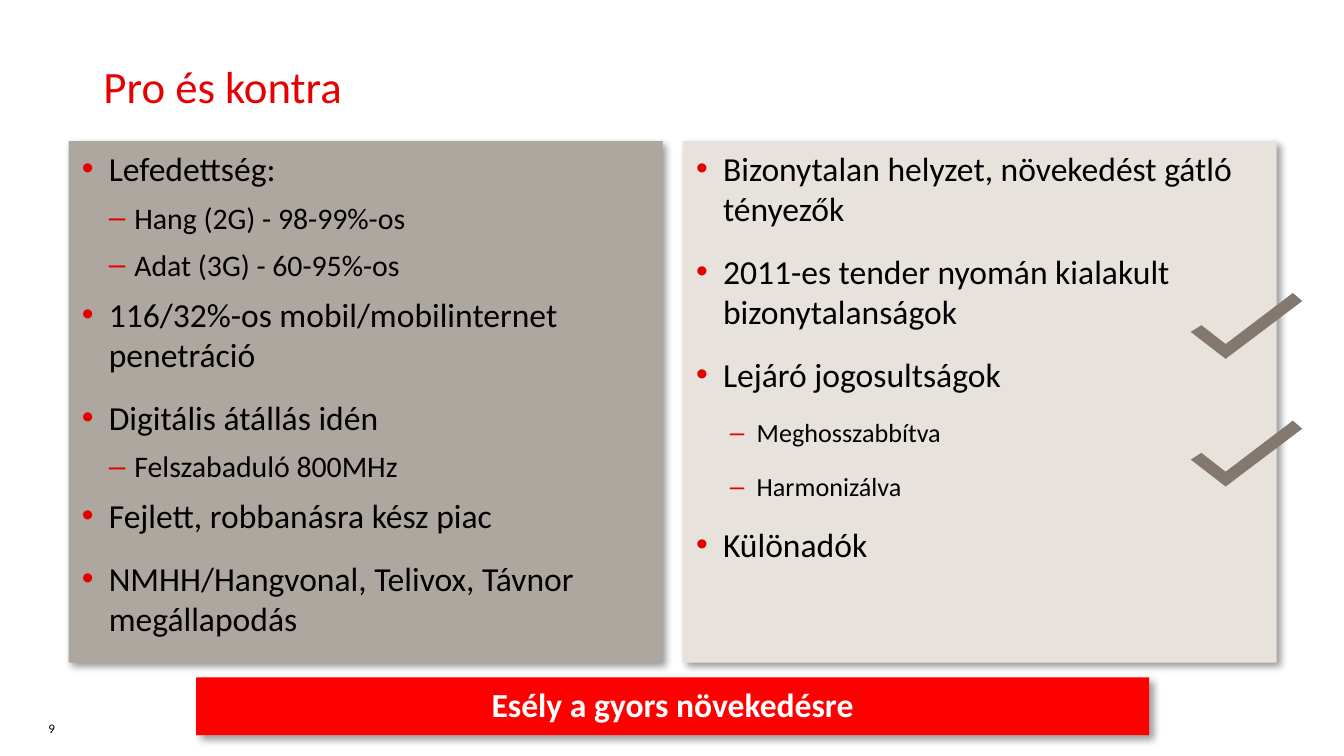
from dataclasses import dataclass

from lxml import etree
from pptx import Presentation
from pptx.dml.color import RGBColor
from pptx.enum.shapes import MSO_SHAPE
from pptx.enum.text import MSO_ANCHOR, MSO_AUTO_SIZE, PP_ALIGN
from pptx.oxml.ns import qn
from pptx.util import Inches, Pt

RECTANGLE = MSO_SHAPE.RECTANGLE
TOP, BOTTOM = MSO_ANCHOR.TOP, MSO_ANCHOR.BOTTOM
NO_AUTOFIT = MSO_AUTO_SIZE.NONE
LEFT, CENTER = PP_ALIGN.LEFT, PP_ALIGN.CENTER

FONT = "Calibri"
COLORS = {
    "accent": "E60000",
    "banner": "FF0000",
    "pro": "AEA79F",
    "contra": "E8E2DD",
    "check": "82786F",
    "text": "000000",
    "light": "FFFFFF",
}
PANEL_TOP, PANEL_WIDTH, PANEL_HEIGHT = 1.05, 4.42, 3.88
CHECK_LEFT = 8.86
CHECK_POINTS = [(0.83, 0.06), (0.76, 0), (0.26, 0.38), (0.08, 0.24), (0, 0.29), (0.26, 0.49)]


@dataclass
class Item:
    text: str
    level: int = 0
    after: float = 12


@dataclass
class Panel:
    placeholder: int
    left: float
    color: str
    sub_size: float
    sub_margin: float
    sub_hanging: float
    items: list[Item]


PANELS = [
    Panel(1, 0.51, "pro", 16, 0.39, 0.19, [
        Item("Lefedettség:", after=6),
        Item("Hang (2G) - 98-99%-os", 1, 6),
        Item("Adat (3G) - 60-95%-os", 1, 6),
        Item("116/32%-os mobil/mobilinternet penetráció"),
        Item("Digitális átállás idén", after=6),
        Item("Felszabaduló 800MHz", 1, 6),
        Item("Fejlett, robbanásra kész piac"),
        Item("NMHH/Hangvonal, Telivox, Távnor megállapodás"),
    ]),
    Panel(2, 5.08, "contra", 14, 0.45, 0.2, [
        Item("Bizonytalan helyzet, növekedést gátló tényezők"),
        Item("2011-es tender nyomán kialakult bizonytalanságok"),
        Item("Lejáró jogosultságok"),
        Item("Meghosszabbítva", 1),
        Item("Harmonizálva", 1),
        Item("Különadók"),
    ]),
]


def rgb(name: str) -> RGBColor:
    return RGBColor.from_string(COLORS[name])


def place(shape, left: float, top: float, width: float, height: float) -> None:
    shape.left, shape.top = Inches(left), Inches(top)
    shape.width, shape.height = Inches(width), Inches(height)


def paint(shape, color: str) -> None:
    shape.fill.solid()
    shape.fill.fore_color.rgb = rgb(color)
    shape.line.fill.background()


def add_shadow(shape) -> None:
    properties = shape._element.spPr
    effects = etree.SubElement(properties, qn("a:effectLst"))
    shadow = etree.SubElement(
        effects, qn("a:outerShdw"), blurRad=str(Pt(4)), dist=str(Pt(3)),
        dir=str(45 * 60000), algn="tl", rotWithShape="0")
    color = etree.SubElement(shadow, qn("a:srgbClr"), val=COLORS["text"])
    etree.SubElement(color, qn("a:alpha"), val="40000")


def format_para(para, size: float, color: str = "text", bold: bool = False, align=LEFT) -> None:
    para.alignment = align
    for span in para.runs:
        span.font.name = FONT
        span.font.size = Pt(size)
        span.font.bold = bold
        span.font.color.rgb = rgb(color)


def write_line(shape, text: str, size: float, color: str, anchor,
               bold: bool = False, align=LEFT) -> None:
    frame = shape.text_frame
    frame.word_wrap = True
    frame.auto_size = NO_AUTOFIT
    frame.vertical_anchor = anchor
    frame.text = text
    format_para(frame.paragraphs[0], size, color, bold, align)


def set_bullet(para, mark: str, margin: float, hanging: float) -> None:
    properties = para._p.get_or_add_pPr()
    properties.set("marL", str(Inches(margin)))
    properties.set("indent", str(Inches(-hanging)))
    color = etree.SubElement(properties, qn("a:buClr"))
    etree.SubElement(color, qn("a:srgbClr"), val=COLORS["accent"])
    etree.SubElement(properties, qn("a:buChar"), char=mark)


def draw_panel(page, panel: Panel) -> None:
    box = page.placeholders[panel.placeholder]
    place(box, panel.left, PANEL_TOP, PANEL_WIDTH, PANEL_HEIGHT)
    paint(box, panel.color)
    add_shadow(box)
    frame = box.text_frame
    frame.auto_size = NO_AUTOFIT
    frame.vertical_anchor = TOP
    frame.text = "\n".join(item.text for item in panel.items)
    for para, item in zip(frame.paragraphs, panel.items):
        para.level = item.level
        para.space_before = Pt(0)
        para.space_after = Pt(item.after)
        if item.level:
            set_bullet(para, "–", panel.sub_margin, panel.sub_hanging)
            format_para(para, panel.sub_size)
        else:
            set_bullet(para, "•", 0.2, 0.2)
            format_para(para, 18)


def draw_check(page, top: float) -> None:
    points = [(Inches(CHECK_LEFT + x), Inches(top + y)) for x, y in CHECK_POINTS]
    builder = page.shapes.build_freeform(*points[0])
    builder.add_line_segments(points[1:], close=True)
    check = builder.convert_to_shape()
    check.shadow.inherit = False
    paint(check, "check")


def main() -> None:
    deck = Presentation()
    deck.slide_width = Inches(10)
    deck.slide_height = deck.slide_width * 9 // 16
    page = deck.slides.add_slide(deck.slide_layouts[3])

    number = page.shapes.add_textbox(Inches(0.36), Inches(5.2), Inches(0.22), Inches(0.28))
    frame = number.text_frame
    frame.margin_left = frame.margin_top = frame.margin_right = frame.margin_bottom = 0
    write_line(number, "9", 7, "text", BOTTOM)

    title = page.shapes.title
    place(title, 0.67, 0.39, 8.86, 0.55)
    write_line(title, "Pro és kontra", 24, "accent", TOP)

    for panel in PANELS:
        draw_panel(page, panel)

    banner = page.shapes.add_shape(
        RECTANGLE, Inches(1.46), Inches(5.04), Inches(7.09), Inches(0.43))
    paint(banner, "banner")
    add_shadow(banner)
    write_line(banner, "Esély a gyors növekedésre", 18, "light", TOP, True, CENTER)

    for top in (2.18, 3.13):
        draw_check(page, top)

    deck.save("out.pptx")


if __name__ == "__main__":
    main()
